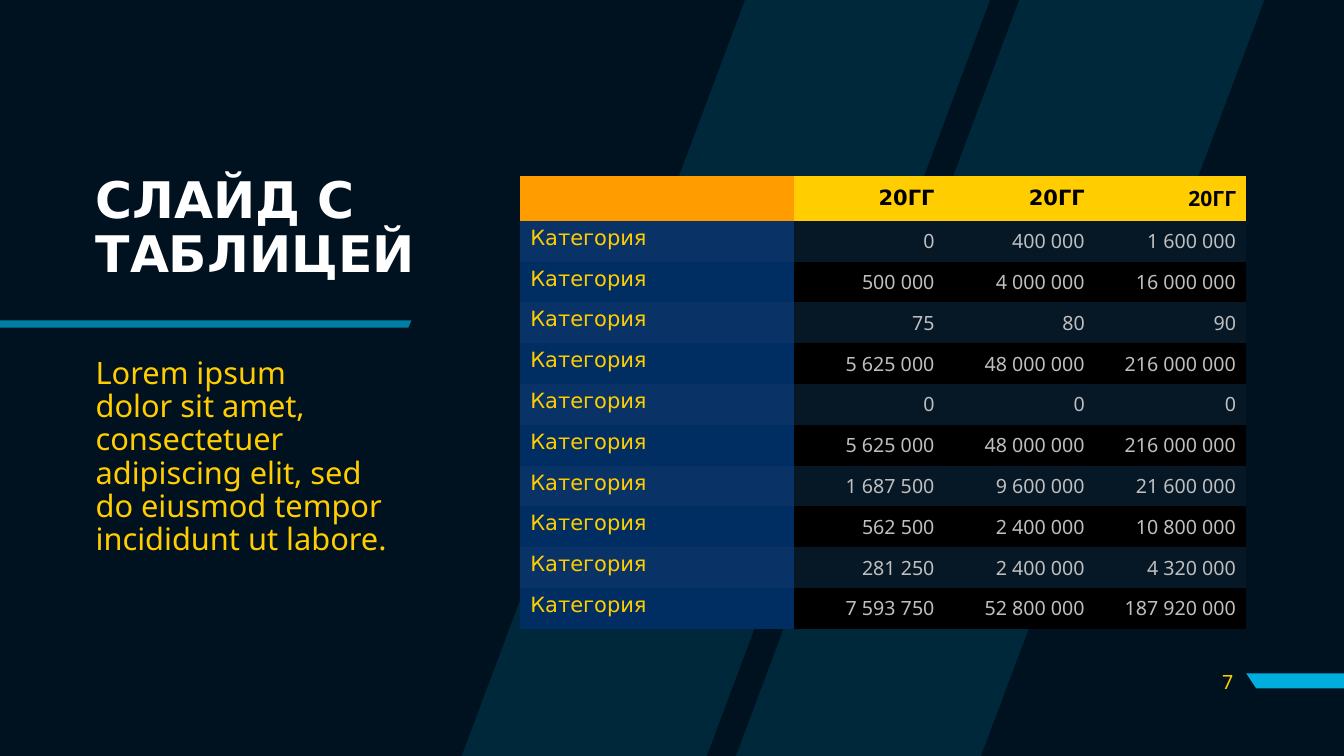
"""Build a dark slide with a heading, a short text and a table of yearly figures."""
import dataclasses

import lxml.etree
import pptx
import pptx.dml.color
import pptx.enum.text
import pptx.oxml.ns
import pptx.util

Inches = pptx.util.Inches
ALIGN = pptx.enum.text.PP_ALIGN
ANCHOR = pptx.enum.text.MSO_ANCHOR


@dataclasses.dataclass(frozen=True)
class Theme:
    background: str = "00111F"
    accent: str = "00AEDE"
    white: str = "FFFFFF"
    black: str = "000000"
    yellow: str = "FFCD00"
    orange: str = "FF9D00"
    navy: str = "002E62"
    light_navy: str = "093366"
    light_black: str = "061726"
    grey: str = "BFBFBF"
    heading_font: str = "DejaVu Sans"
    body_font: str = "Noto Sans"
    title_size: int = 36
    body_size: int = 22
    label_size: int = 15
    figure_size: int = 14


THEME = Theme()
NO_GRID_STYLE = "{2D5ABB26-0587-4C30-8999-92F81FD0307C}"
UNITS_PER_INCH = 100
BANDS = [
    [(10.11, 0), (7.3, 7.5), (9.73, 7.5), (12.54, 0)],
    [(4.58, 7.5), (7.01, 7.5), (9.82, 0), (7.39, 0)],
]
NUMBER_BAR = [(13.33, 6.68), (13.33, 6.83), (12.46, 6.83), (12.36, 6.68)]
TITLE_RULE = [(0, 3.18), (0, 3.25), (4.05, 3.25), (4.08, 3.18)]
TITLE = ["СЛАЙД С", "ТАБЛИЦЕЙ"]
BODY = [
    "Lorem ipsum",
    "dolor sit amet, consectetuer adipiscing elit, sed",
    "do eiusmod tempor incididunt ut labore.",
]
YEAR = "20ГГ"
CATEGORY = "Категория"
FIGURES = [
    (0, 400000, 1600000),
    (500000, 4000000, 16000000),
    (75, 80, 90),
    (5625000, 48000000, 216000000),
    (0, 0, 0),
    (5625000, 48000000, 216000000),
    (1687500, 9600000, 21600000),
    (562500, 2400000, 10800000),
    (281250, 2400000, 4320000),
    (7593750, 52800000, 187920000),
]
COLUMN_WIDTHS = [2.72, 1.49, 1.49, 1.5]
TABLE_HEIGHT = 4.49
HEADER_HEIGHT = 0.44


def rgb(color):
    return pptx.dml.color.RGBColor.from_string(color)


def paint(fill, color):
    fill.solid()
    fill.fore_color.rgb = rgb(color)


def set_opacity(shape, percent):
    tint = shape._element.spPr.find(".//" + pptx.oxml.ns.qn("a:srgbClr"))
    alpha = lxml.etree.SubElement(tint, pptx.oxml.ns.qn("a:alpha"))
    alpha.set("val", str(percent * 1000))


def write(para, lines, size, font, color, bold=False, align=ALIGN.LEFT):
    para.alignment = align
    for index, line in enumerate(lines):
        if index:
            para.add_line_break()
        span = para.add_run()
        span.text = line
        span.font.size = pptx.util.Pt(size)
        span.font.name = font
        span.font.bold = bold
        span.font.color.rgb = rgb(color)


def add_outline(page, contours, opacity=100):
    first, *others = [
        [(round(x * UNITS_PER_INCH), round(y * UNITS_PER_INCH)) for x, y in contour]
        for contour in contours]
    builder = page.shapes.build_freeform(*first[0], scale=Inches(1) / UNITS_PER_INCH)
    builder.add_line_segments(first[1:], close=True)
    for contour in others:
        builder.move_to(*contour[0])
        builder.add_line_segments(contour[1:], close=True)
    shape = builder.convert_to_shape()
    shape.shadow.inherit = False
    shape.line.fill.background()
    paint(shape.fill, THEME.accent)
    if opacity < 100:
        set_opacity(shape, opacity)


def add_text(page, place, lines, size, font, color, anchor, spacing=1.0, **style):
    box = page.shapes.add_textbox(*map(Inches, place))
    box.text_frame.word_wrap = True
    box.text_frame.vertical_anchor = anchor
    para = box.text_frame.paragraphs[0]
    para.line_spacing = spacing
    write(para, lines, size, font, color, **style)


def fill_header(cells):
    corner, *years = cells
    paint(corner.fill, THEME.orange)
    fonts = [THEME.heading_font, THEME.heading_font, THEME.body_font]
    for cell, font in zip(years, fonts):
        paint(cell.fill, THEME.yellow)
        cell.vertical_anchor = ANCHOR.MIDDLE
        write(cell.text_frame.paragraphs[0], [YEAR], THEME.label_size, font,
              THEME.black, bold=True, align=ALIGN.RIGHT)


def fill_row(cells, figures, shaded):
    label, *values = cells
    paint(label.fill, THEME.light_navy if shaded else THEME.navy)
    write(label.text_frame.paragraphs[0], [CATEGORY], THEME.label_size,
          THEME.heading_font, THEME.yellow)
    for cell, figure in zip(values, figures):
        paint(cell.fill, THEME.light_black if shaded else THEME.black)
        cell.vertical_anchor = ANCHOR.MIDDLE
        write(cell.text_frame.paragraphs[0], [f"{figure:,}".replace(",", " ")],
              THEME.figure_size, THEME.body_font, THEME.grey, align=ALIGN.RIGHT)


def add_figures_table(page):
    frame = page.shapes.add_table(
        len(FIGURES) + 1, len(COLUMN_WIDTHS), Inches(5.16), Inches(1.75),
        Inches(sum(COLUMN_WIDTHS)), Inches(TABLE_HEIGHT))
    table = frame.table
    table._tbl.tblPr.find(pptx.oxml.ns.qn("a:tableStyleId")).text = NO_GRID_STYLE
    for column, width in zip(table.columns, COLUMN_WIDTHS):
        column.width = Inches(width)
    header, *rows = table.rows
    header.height = Inches(HEADER_HEIGHT)
    fill_header(header.cells)
    for index, (row, figures) in enumerate(zip(rows, FIGURES)):
        row.height = Inches((TABLE_HEIGHT - HEADER_HEIGHT) / len(FIGURES))
        fill_row(row.cells, figures, shaded=index % 2 == 0)


def main():
    deck = pptx.Presentation()
    deck.slide_width, deck.slide_height = Inches(13.33), Inches(7.5)
    page = deck.slides.add_slide(deck.slide_layouts[6])
    paint(page.background.fill, THEME.background)
    add_outline(page, BANDS, opacity=15)
    add_outline(page, [NUMBER_BAR])
    add_outline(page, [TITLE_RULE], opacity=70)
    add_text(page, (0.85, 1.44, 3.42, 1.67), TITLE, THEME.title_size,
             THEME.heading_font, THEME.white, ANCHOR.MIDDLE, spacing=0.9, bold=True)
    add_text(page, (0.85, 3.5, 3.09, 2.36), BODY, THEME.body_size,
             THEME.body_font, THEME.yellow, ANCHOR.TOP, spacing=0.9)
    add_figures_table(page)
    add_text(page, (11.73, 6.56, 0.6, 0.4), ["7"], THEME.figure_size,
             THEME.body_font, THEME.yellow, ANCHOR.MIDDLE, align=ALIGN.RIGHT)
    deck.save("out.pptx")


if __name__ == "__main__":
    main()
